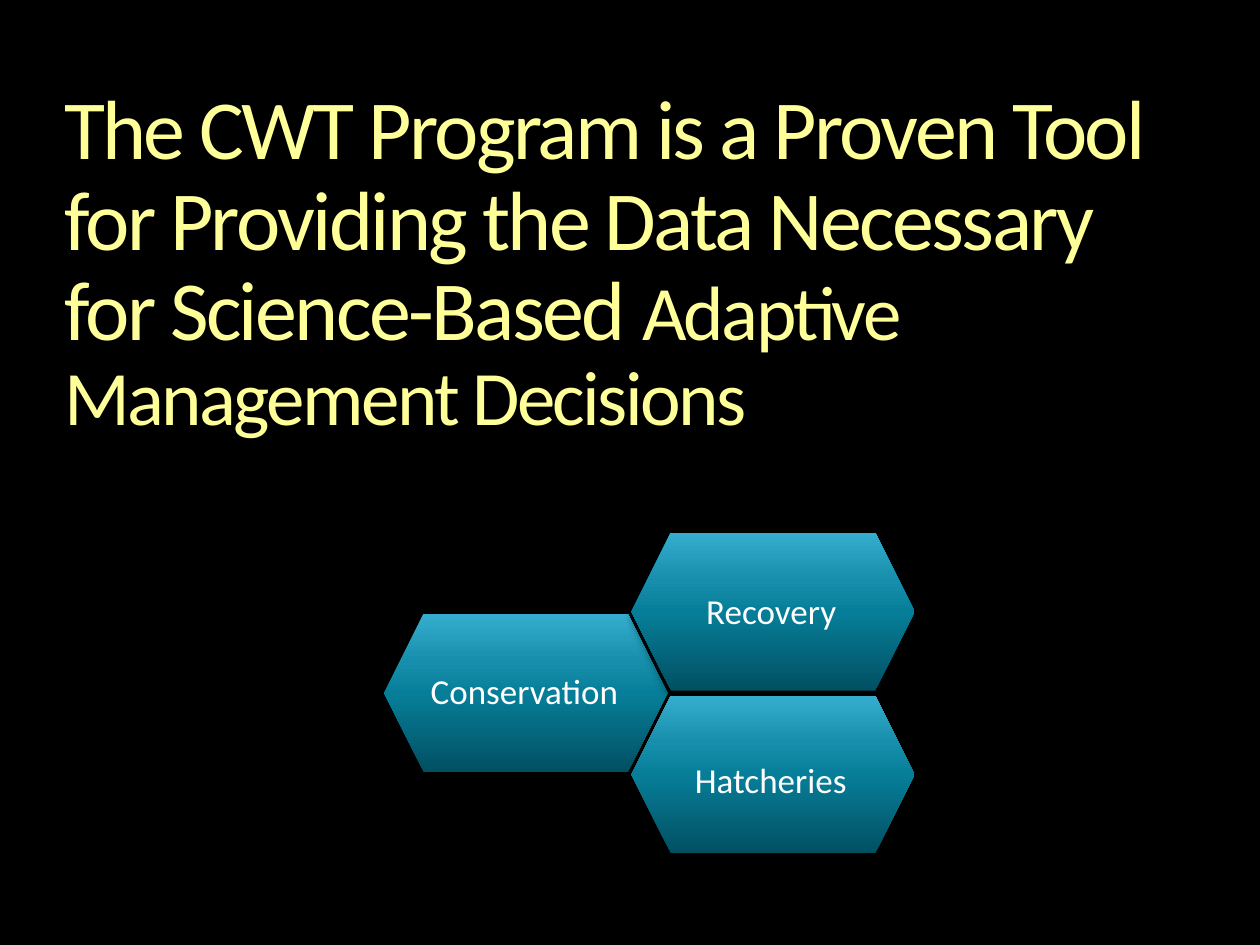
from collections import namedtuple

from lxml import etree
from pptx import Presentation
from pptx.dml.color import RGBColor
from pptx.enum.shapes import MSO_SHAPE
from pptx.enum.text import MSO_ANCHOR
from pptx.oxml import parse_xml
from pptx.oxml.ns import nsdecls, qn
from pptx.util import Inches, Pt

HEXAGON = MSO_SHAPE.HEXAGON
TOP = MSO_ANCHOR.TOP
FONT = "Calibri"
COLORS = {"background": "000000", "title": "FFFF99", "label": "FFFFFF", "shadow": "000000"}
HEXAGON_STOPS = [(0, "015062"), (50, "077E99"), (70, "178EAB"), (100, "35ADCE")]
TITLE_SPANS = [
    ("The CWT Program is a Proven Tool for Providing the Data Necessary for Science-Based ", 48),
    ("Adaptive Management Decisions", 44),
]
# Name, column and row of the hexagon, then the label's box in shares of the hexagon
TOPICS = [
    ("Conservation", 0, 1, (0.12, 0.31, 0.78, 0.35)),
    ("Recovery", 1, 0, (0.22, 0.32, 0.70, 0.35)),
    ("Hatcheries", 1, 2, (0.18, 0.36, 0.67, 0.35)),
]

Box = namedtuple("Box", "left top width height")


def share(box, left, top, width, height):
    """Return the part of a box given by shares of its size."""
    return Box(
        int(box.left + left * box.width),
        int(box.top + top * box.height),
        int(width * box.width),
        int(height * box.height),
    )


def style_run(run, size, color):
    run.font.name = FONT
    run.font.size = Pt(size)
    run.font.color.rgb = RGBColor.from_string(COLORS[color])


def add_title(page, box):
    frame = page.shapes.add_textbox(*box).text_frame
    frame.word_wrap = True
    frame.vertical_anchor = TOP
    frame.margin_left = frame.margin_top = frame.margin_right = frame.margin_bottom = 0
    para = frame.paragraphs[0]
    para.line_spacing = 0.9
    for text, size in TITLE_SPANS:
        span = para.add_run()
        span.text = text
        style_run(span, size, "title")
        span.font._element.set("spc", "-150")


def add_hexagon(page, box):
    hexagon = page.shapes.add_shape(HEXAGON, *box)
    hexagon.line.fill.background()
    hexagon.shadow.inherit = False
    properties = hexagon._element.spPr
    stops = "".join(
        f'<a:gs pos="{position * 1000}"><a:srgbClr val="{color}"/></a:gs>'
        for position, color in HEXAGON_STOPS
    )
    gradient = parse_xml(
        f'<a:gradFill {nsdecls("a")} rotWithShape="1"><a:gsLst>{stops}</a:gsLst>'
        '<a:lin ang="16200000" scaled="0"/></a:gradFill>'
    )
    properties.find(qn("a:prstGeom")).addnext(gradient)
    shadow = etree.SubElement(
        properties.find(qn("a:effectLst")), qn("a:outerShdw"),
        blurRad=str(Pt(5)), dist=str(Pt(3)), dir="5400000", rotWithShape="0",
    )
    color = etree.SubElement(shadow, qn("a:srgbClr"), val=COLORS["shadow"])
    etree.SubElement(color, qn("a:alpha"), val="45000")


def add_label(page, box, text):
    frame = page.shapes.add_textbox(*box).text_frame
    frame.word_wrap = True
    frame.text = text
    style_run(frame.paragraphs[0].runs[0], 20, "label")


def add_topic_cluster(page, box):
    """Place interlocking hexagons on half-height rows, with labels above them."""
    cells = [
        share(box, column * 0.466, row * 0.254, 0.534, 0.492)
        for _, column, row, _ in TOPICS
    ]
    for cell in cells:
        add_hexagon(page, cell)
    for cell, (name, _, _, label_shares) in zip(cells, TOPICS):
        add_label(page, share(cell, *label_shares), name)


def main():
    deck = Presentation()
    deck.slide_width, deck.slide_height = Inches(10), Inches(7.5)
    page = deck.slides.add_slide(deck.slide_layouts[6])
    page.background.fill.solid()
    page.background.fill.fore_color.rgb = RGBColor.from_string(COLORS["background"])
    whole = Box(0, 0, deck.slide_width, deck.slide_height)
    add_title(page, share(whole, 0.051, 0.092, 0.9, 0.567))
    add_topic_cluster(page, share(whole, 0.305, 0.564, 0.421, 0.339))
    deck.save("out.pptx")


if __name__ == "__main__":
    main()
